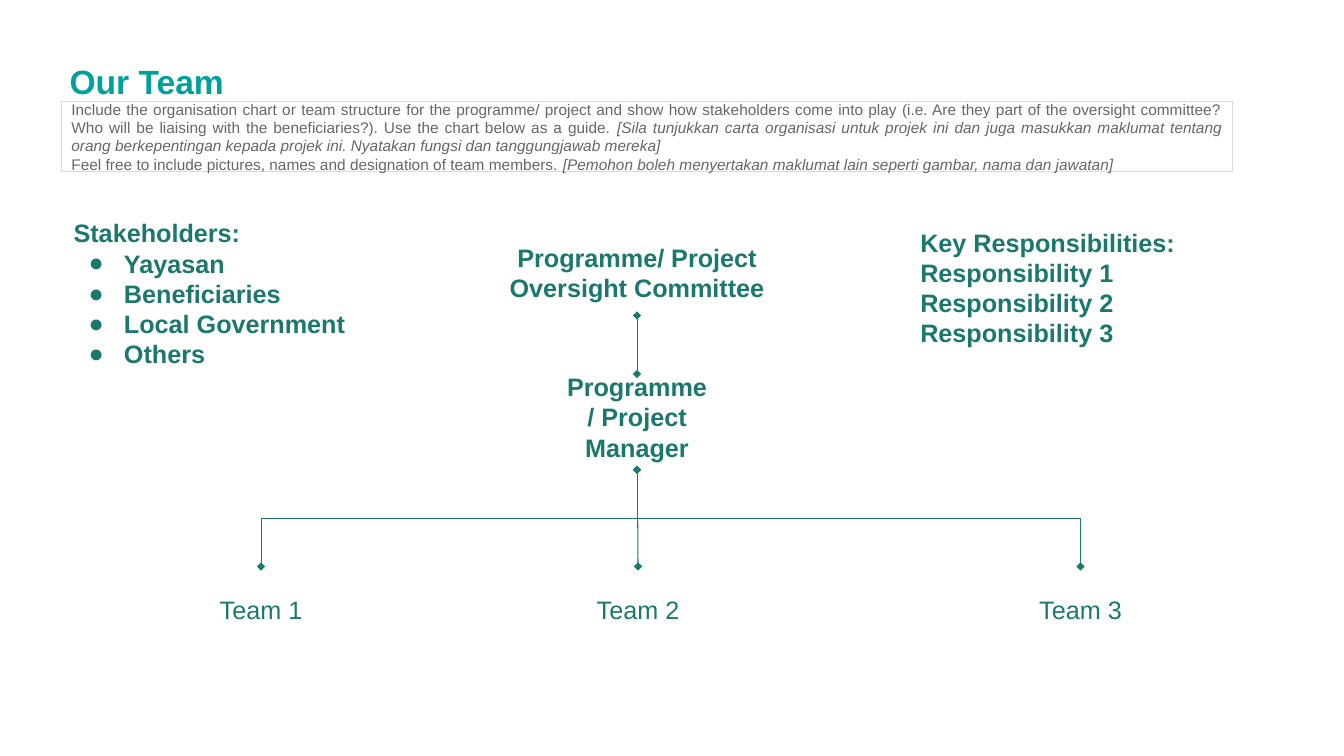
from dataclasses import dataclass

import lxml.etree
import pptx
import pptx.dml.color
import pptx.enum.shapes
import pptx.enum.text
import pptx.oxml.ns
import pptx.shapes.autoshape
import pptx.shapes.connector
import pptx.shapes.shapetree
import pptx.text.text
import pptx.util

Pt = pptx.util.Pt
Align = pptx.enum.text.PP_ALIGN
Line = pptx.enum.shapes.MSO_CONNECTOR
qn = pptx.oxml.ns.qn

TURQUOISE = pptx.dml.color.RGBColor(0x00, 0xA1, 0x9C)
TEAL = pptx.dml.color.RGBColor(0x1B, 0x78, 0x6E)
GREY = pptx.dml.color.RGBColor(0x66, 0x66, 0x66)
PALE_GREY = pptx.dml.color.RGBColor(0xD9, 0xD9, 0xD9)
FONT = "Arial"
LABEL_INSET = 9.36
LINE_WIDTH = 0.75

TEAM_TOP = 404.64
TEAM_WIDTH = 161.28
LABEL_HEIGHT = 61.2
FORK_TOP = 335.5
CENTRE = 455.04


@dataclass
class Label:
    left: float
    top: float
    width: float
    height: float
    lines: list[str]
    align: Align = Align.CENTER
    bold: bool = True
    first_bullet: int | None = None


def set_frame(frame: pptx.text.text.TextFrame, side: float, end: float) -> None:
    """Wrap and centre the text vertically, with the given insets."""
    frame.word_wrap = True
    frame.auto_size = pptx.enum.text.MSO_AUTO_SIZE.NONE
    frame.vertical_anchor = pptx.enum.text.MSO_ANCHOR.MIDDLE
    frame.margin_left = frame.margin_right = Pt(side)
    frame.margin_top = frame.margin_bottom = Pt(end)


def add_run(paragraph: pptx.text.text._Paragraph, text: str, size: float,
            colour: pptx.dml.color.RGBColor, bold: bool = False,
            italic: bool = False) -> None:
    run = paragraph.add_run()
    run.text = text
    run.font.name = FONT
    run.font.size = Pt(size)
    run.font.color.rgb = colour
    run.font.bold = bold
    run.font.italic = italic


def add_bullet(paragraph: pptx.text.text._Paragraph) -> None:
    properties = paragraph._p.get_or_add_pPr()
    properties.set("marL", str(Pt(36)))
    properties.set("indent", str(-Pt(25.2)))
    colour = lxml.etree.SubElement(properties, qn("a:buClr"))
    lxml.etree.SubElement(colour, qn("a:srgbClr"), val=str(TEAL))
    lxml.etree.SubElement(properties, qn("a:buFont"), typeface=FONT)
    lxml.etree.SubElement(properties, qn("a:buChar"), char="●")


def add_label(shapes: pptx.shapes.shapetree.SlideShapes,
              label: Label) -> pptx.shapes.autoshape.Shape:
    box = shapes.add_textbox(Pt(label.left), Pt(label.top),
                             Pt(label.width), Pt(label.height))
    frame = box.text_frame
    set_frame(frame, LABEL_INSET, LABEL_INSET)
    for index, line in enumerate(label.lines):
        paragraph = frame.add_paragraph() if index else frame.paragraphs[0]
        paragraph.alignment = label.align
        if label.first_bullet is not None and index >= label.first_bullet:
            add_bullet(paragraph)
        add_run(paragraph, line, 18, TEAL, bold=label.bold)
    return box


def style_line(line: pptx.shapes.connector.Connector, *diamond_ends: str) -> None:
    """Colour the line and put diamonds on headEnd and/or tailEnd, in that order."""
    line.line.color.rgb = TEAL
    line.line.width = Pt(LINE_WIDTH)
    outline = line.line._get_or_add_ln()
    for end in diamond_ends:
        lxml.etree.SubElement(outline, qn(f"a:{end}"), type="diamond")
    lxml.etree.SubElement(line._element.spPr, qn("a:effectLst"))


def add_vertical_elbow(shapes: pptx.shapes.shapetree.SlideShapes,
                       start: tuple[float, float],
                       finish: tuple[float, float]) -> None:
    """Draw an elbow that leaves and arrives vertically: a level one turned 270°."""
    middle_x = (start[0] + finish[0]) / 2
    middle_y = (start[1] + finish[1]) / 2
    unturned = [Pt(value) for x, y in (start, finish)
                for value in (middle_x - (y - middle_y), middle_y + (x - middle_x))]
    elbow = shapes.add_connector(Line.ELBOW, *unturned)
    elbow._element.spPr.find(qn("a:xfrm")).set("rot", str(270 * 60000))
    style_line(elbow, "headEnd", "tailEnd")


def add_guidance(shapes: pptx.shapes.shapetree.SlideShapes) -> None:
    guidance = shapes.add_shape(pptx.enum.shapes.MSO_SHAPE.RECTANGLE,
                                Pt(43.92), Pt(72.72), Pt(836.64), Pt(49.68))
    guidance.shadow.inherit = False
    guidance.fill.background()
    guidance.line.color.rgb = PALE_GREY
    guidance.line.width = Pt(LINE_WIDTH)
    frame = guidance.text_frame
    set_frame(frame, 7.2, 3.6)
    advice = [
        ("Include the organisation chart or team structure for the programme/ project "
         "and show how stakeholders come into play (i.e. Are they part of the oversight "
         "committee? Who will be liaising with the beneficiaries?). Use the chart below "
         "as a guide. ",
         "[Sila tunjukkan carta organisasi untuk projek ini dan juga masukkan maklumat "
         "tentang orang berkepentingan kepada projek ini. Nyatakan fungsi dan "
         "tanggungjawab mereka]"),
        ("Feel free to include pictures, names and designation of team members. ",
         "[Pemohon boleh menyertakan maklumat lain seperti gambar, nama dan jawatan]"),
    ]
    for index, (english, malay) in enumerate(advice):
        paragraph = frame.add_paragraph() if index else frame.paragraphs[0]
        paragraph.alignment = Align.JUSTIFY
        add_run(paragraph, english, 11, GREY)
        add_run(paragraph, malay, 11, GREY, italic=True)


def main() -> None:
    deck = pptx.Presentation()
    deck.slide_width, deck.slide_height = Pt(960), Pt(540)
    slide = deck.slides.add_slide(deck.slide_layouts[5])
    shapes = slide.shapes

    title = shapes.title
    title.left, title.top = Pt(42.48), Pt(28.08)
    title.width, title.height = Pt(361.44), Pt(59.04)
    set_frame(title.text_frame, 7.2, 3.6)
    heading = title.text_frame.paragraphs[0]
    heading.alignment = Align.LEFT
    add_run(heading, "Our Team", 24, TURQUOISE, bold=True)

    add_guidance(shapes)

    committee = add_label(shapes, Label(347.76, 164.16, 214.56, LABEL_HEIGHT,
                                        ["Programme/ Project Oversight Committee"]))
    manager = add_label(shapes, Label(374.4, 267.12, TEAM_WIDTH, LABEL_HEIGHT,
                                      ["Programme", "/ Project Manager"]))
    teams = [
        add_label(shapes, Label(left, TEAM_TOP, TEAM_WIDTH, LABEL_HEIGHT,
                                [f"Team {number}"], bold=False))
        for number, left in enumerate((105.84, 375.12, 691.2), start=1)
    ]
    add_label(shapes, Label(43.2, 166.32, 219.6, 86.4,
                            ["Stakeholders:", "Yayasan", "Beneficiaries",
                             "Local Government", "Others"],
                            Align.LEFT, first_bullet=1))
    add_label(shapes, Label(648, 166.32, 277.2, 77.76,
                            ["Key Responsibilities:"]
                            + [f"Responsibility {number}" for number in range(1, 4)],
                            Align.LEFT))

    fork = (CENTRE, FORK_TOP)
    first_top, _, last_top = [((team.left + team.width / 2) / Pt(1), TEAM_TOP)
                              for team in teams]
    add_vertical_elbow(shapes, fork, last_top)
    add_vertical_elbow(shapes, first_top, fork)

    oversight = shapes.add_connector(Line.STRAIGHT, 0, 0, 0, 0)
    oversight.begin_connect(committee, 2)
    oversight.end_connect(manager, 0)
    style_line(oversight, "headEnd", "tailEnd")

    middle_branch = shapes.add_connector(Line.STRAIGHT, Pt(455.5), Pt(369.5),
                                         Pt(455.5), Pt(TEAM_TOP))
    middle_branch.end_connect(teams[1], 0)
    style_line(middle_branch, "tailEnd")

    deck.save("out.pptx")


if __name__ == "__main__":
    main()
